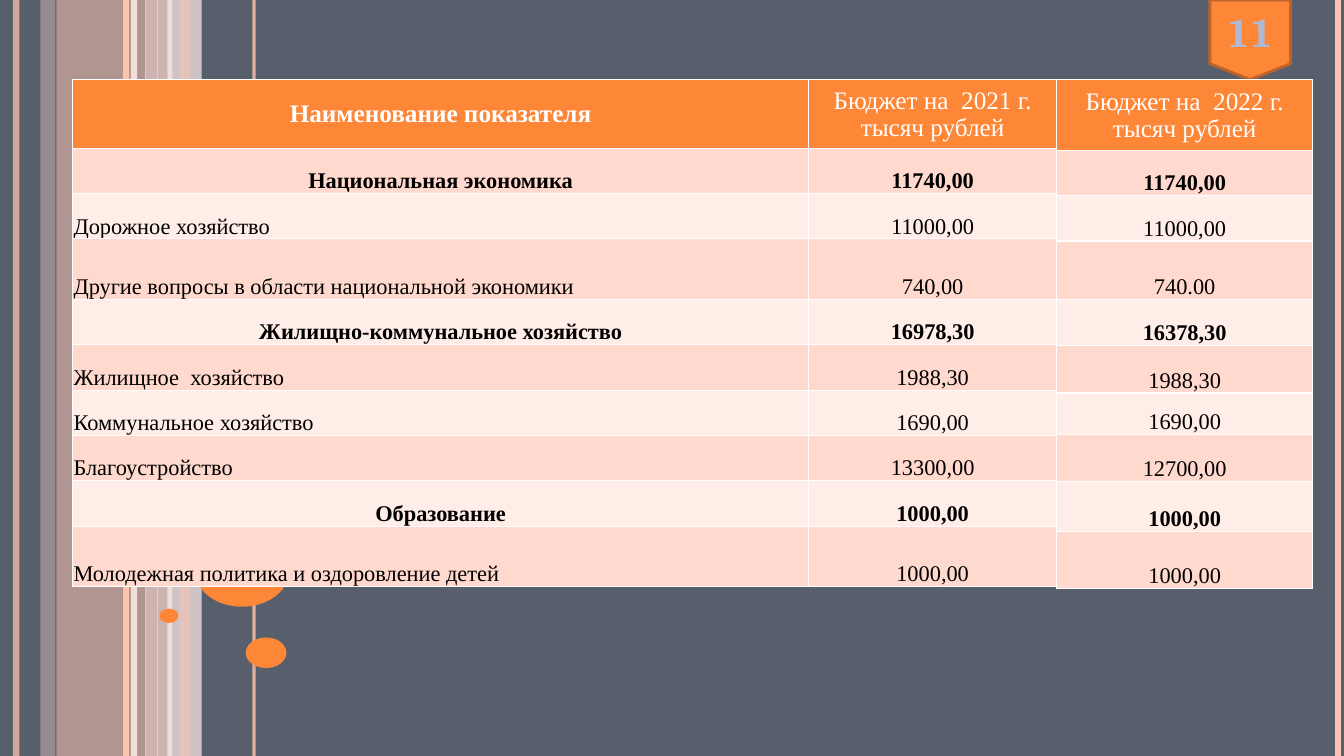
from dataclasses import dataclass

from pptx import Presentation
from pptx.dml.color import RGBColor
from pptx.enum.shapes import MSO_CONNECTOR, MSO_SHAPE
from pptx.enum.text import MSO_ANCHOR, PP_ALIGN
from pptx.oxml.ns import qn
from pptx.util import Inches, Pt
from lxml import etree

RECT = MSO_SHAPE.RECTANGLE
OVAL = MSO_SHAPE.OVAL
BADGE = MSO_SHAPE.FLOWCHART_OFFPAGE_CONNECTOR
STRAIGHT = MSO_CONNECTOR.STRAIGHT
LEFT, CENTER = PP_ALIGN.LEFT, PP_ALIGN.CENTER
MIDDLE, BOTTOM = MSO_ANCHOR.MIDDLE, MSO_ANCHOR.BOTTOM


@dataclass(frozen=True)
class Theme:
    back: str = "575F6D"
    main: str = "FE8637"
    edge: str = "BC6329"
    rose: str = "FEC3AE"
    peach: str = "FFD9CE"
    pale: str = "FFEDE8"
    white: str = "FFFFFF"
    black: str = "000000"
    digit: str = "AEBAD5"
    body: str = "Times New Roman"
    serif: str = "TeX Gyre Schola"
    small: int = 16
    head: int = 18
    large: int = 28


THEME = Theme()

ROWS = [
    ("Национальная экономика", "11740,00", "11740,00", True),
    ("Дорожное хозяйство", "11000,00", "11000,00", False),
    ("Другие вопросы в области национальной экономики", "740,00", "740.00", False),
    ("Жилищно-коммунальное хозяйство", "16978,30", "16378,30", True),
    ("Жилищное  хозяйство", "1988,30", "1988,30", False),
    ("Коммунальное хозяйство", "1690,00", "1690,00", False),
    ("Благоустройство", "13300,00", "12700,00", False),
    ("Образование", "1000,00", "1000,00", True),
    ("Молодежная политика и оздоровление детей", "1000,00", "1000,00", False),
]


def paint(fill, color, alpha=100):
    fill.solid()
    fill.fore_color.rgb = RGBColor.from_string(color)
    if alpha < 100:
        tint = fill._xPr.find(qn("a:solidFill"))[0]
        etree.SubElement(tint, qn("a:alpha"), val=str(alpha * 1000))


def write(frame, text, size=THEME.small, font=THEME.body, color=THEME.black,
          bold=False, align=CENTER):
    para = frame.paragraphs[0]
    para.alignment = align
    run = para.add_run()
    run.text = text
    run.font.size = Pt(size)
    run.font.name = font
    run.font.bold = bold
    run.font.color.rgb = RGBColor.from_string(color)


def draw(slide, kind, box, color, alpha=100):
    shape = slide.shapes.add_shape(kind, *map(Inches, box))
    shape.shadow.inherit = False
    paint(shape.fill, color, alpha)
    shape.line.fill.background()
    return shape


def rule(slide, x, top, high, color, width, alpha=100):
    line = slide.shapes.add_connector(
        STRAIGHT, Inches(x), Inches(top), Inches(x), Inches(top + high))
    line.line.width = Pt(width)
    paint(line.line.fill, color, alpha)
    etree.SubElement(line._element.spPr, qn("a:effectLst"))


def stripes(slide, box):
    left, top, wide, high = box

    def bands(items):
        for x, width, color, alpha in items:
            draw(slide, RECT, (left + x, top, width, high), color, alpha)

    bands([(0.56, 0.89, THEME.rose, 54), (0.4, 0.15, THEME.peach, 36),
           (1.44, 0.27, THEME.peach, 70), (1.66, 0.34, THEME.pale, 71)])
    for x, color, width, alpha in [
        (0.16, THEME.rose, 4.5, 73), (1.33, THEME.pale, 4.5, 83),
        (1.25, THEME.rose, 4.5, 100), (2.52, THEME.rose, 2.25, 82),
        (1.56, THEME.rose, 0.75, 100), (wide - 0.06, THEME.rose, 4.5, 100),
    ]:
        rule(slide, left + x, top, high, color, width, alpha)
    bands([(1.78, 0.11, THEME.rose, 51)])


def bubbles(slide, box):
    left, top, wide, high = box
    for x, y, width in [(0, 0, 0.79), (0.44, 0.55, 0.39), (0.29, 0.8, 0.08),
                        (0.65, 0.9, 0.17), (0.78, 0.4, 0.22)]:
        size = width * wide
        draw(slide, OVAL, (left + x * wide, top + y * high, size, size * 0.75),
             THEME.main)


def badge(slide, box):
    shape = draw(slide, BADGE, box, THEME.main)
    paint(shape.line.fill, THEME.edge)
    shape.line.width = Pt(2)
    frame = shape.text_frame
    frame.vertical_anchor = MIDDLE
    write(frame, "11", size=THEME.large, font=THEME.serif, color=THEME.digit,
          bold=True)


def border(cell):
    props = cell._tc.get_or_add_tcPr()
    for spot, side in enumerate(("lnL", "lnR", "lnT", "lnB")):
        line = etree.Element(qn("a:" + side), w=str(Pt(1)))
        fill = etree.SubElement(line, qn("a:solidFill"))
        etree.SubElement(fill, qn("a:srgbClr"), val=THEME.white)
        props.insert(spot, line)


def grid(slide, box, cols, highs, heads, rows):
    table = slide.shapes.add_table(
        len(highs), len(cols), *map(Inches, box)).table
    for col, width in zip(table.columns, cols):
        col.width = Inches(width)
    for row, high in zip(table.rows, highs):
        row.height = Inches(high)
    lines = [(heads, True)] + rows
    for r, (texts, bold) in enumerate(lines):
        for c, text in enumerate(texts):
            cell = table.cell(r, c)
            label = len(texts) > 1 and c == 0
            if r or not label:
                cell.margin_left = cell.margin_right = Inches(0.01)
                cell.margin_top, cell.margin_bottom = Inches(0.01), 0
            if r:
                cell.vertical_anchor = BOTTOM
                paint(cell.fill, THEME.peach if r % 2 else THEME.pale)
                write(cell.text_frame, text, bold=bold,
                      align=LEFT if label and not bold else CENTER)
            else:
                cell.vertical_anchor = MIDDLE
                paint(cell.fill, THEME.main)
                write(cell.text_frame, text, size=THEME.head,
                      color=THEME.white, bold=label)
            border(cell)


def budget(slide, box):
    left, top, wide, high = box
    cols = (7.3, 2.46)
    split = sum(cols)
    grid(slide, (left, top, split, high), cols,
         (0.68, 0.45, 0.45, 0.6, 0.45, 0.45, 0.45, 0.45, 0.45, 0.6),
         ("Наименование показателя", "Бюджет на  2021 г. тысяч рублей"),
         [((name, old), bold) for name, old, new, bold in ROWS])
    last = wide - split
    grid(slide, (left + split, top, last, high), (last,),
         (0.7, 0.45, 0.45, 0.58, 0.46, 0.47, 0.41, 0.47, 0.49, 0.57),
         ("Бюджет на  2022 г. тысяч рублей",),
         [((new,), bold) for name, old, new, bold in ROWS])


def main():
    deck = Presentation()
    deck.slide_width, deck.slide_height = Inches(13.33), Inches(7.5)
    slide = deck.slides.add_slide(deck.slide_layouts[6])
    paint(slide.background.fill, THEME.back)
    stripes(slide, (0, 0, 13.33, 7.5))
    bubbles(slide, (0.89, 3.75, 2.38, 2.86))
    badge(slide, (12, 0, 0.8, 0.79))
    budget(slide, (0.72, 0.79, 12.3, 5.05))
    deck.save("out.pptx")


if __name__ == "__main__":
    main()
